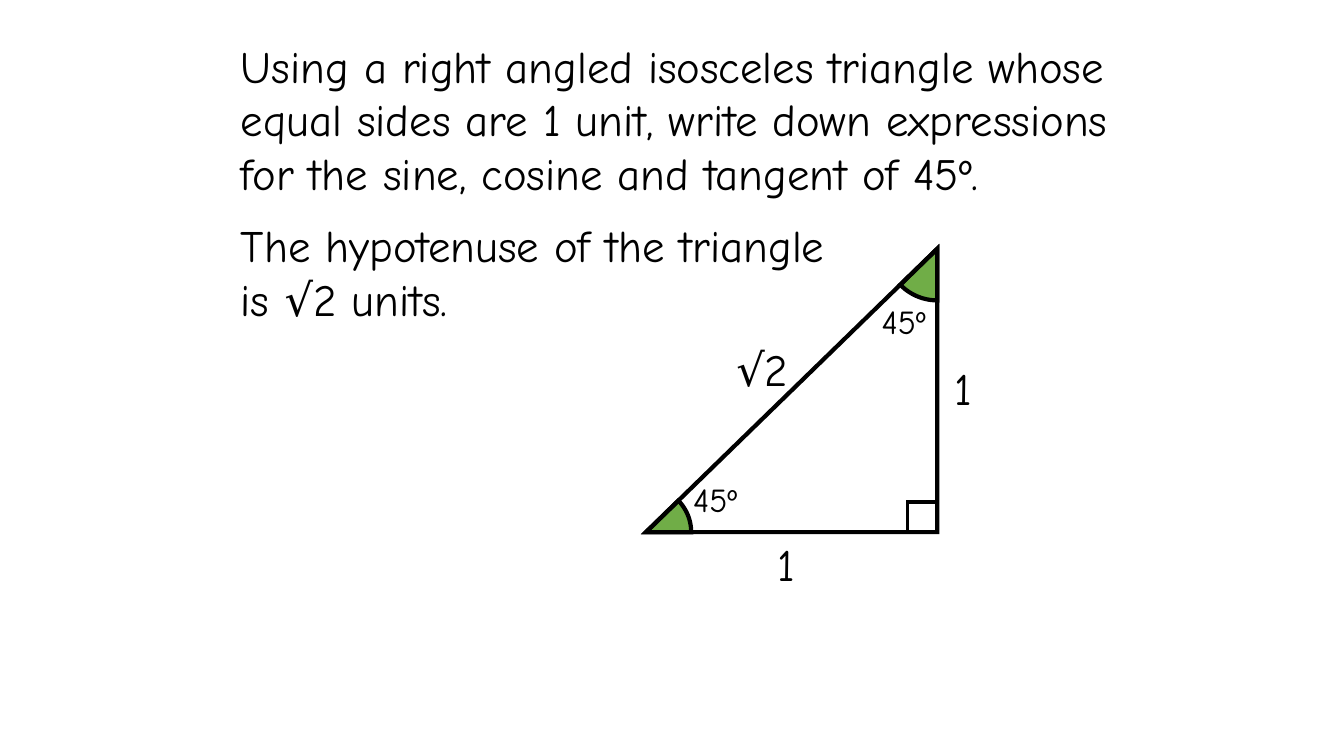
from dataclasses import dataclass
from math import atan2, cos, degrees, radians, sin

from lxml import etree
from pptx import Presentation
from pptx.dml.color import RGBColor
from pptx.enum.shapes import MSO_SHAPE
from pptx.oxml.ns import qn
from pptx.util import Cm, Pt

RIGHT_TRIANGLE = MSO_SHAPE.RIGHT_TRIANGLE
RECTANGLE = MSO_SHAPE.RECTANGLE


@dataclass(frozen=True)
class Theme:
    font: str = "Comic Neue"
    ink: RGBColor = RGBColor(0x00, 0x00, 0x00)
    angle_fill: RGBColor = RGBColor(0x70, 0xAD, 0x47)
    body_size: float = 32
    angle_size: float = 24
    side_line: float = 3
    square_line: float = 2.25


THEME = Theme()


# All lengths below are in centimetres
@dataclass(frozen=True)
class Label:
    text: str
    left: float
    top: float
    width: float
    height: float
    size: float = THEME.body_size


@dataclass(frozen=True)
class Sector:
    x: float
    y: float
    radius: float
    start: float  # degrees, clockwise from the right
    end: float


@dataclass(frozen=True)
class Outline:
    kind: int
    left: float
    top: float
    width: float
    height: float
    line: float


# Triangle geometry
LEFT, TOP, BASE, HEIGHT = 16.28, 6.27, 7.34, 7.14
RIGHT, BOTTOM = LEFT + BASE, TOP + HEIGHT
SLOPE = degrees(atan2(HEIGHT, BASE))
SQUARE = 0.76
ARC_STEPS = 24

SENTENCES = [
    Label("The hypotenuse of the triangle \vis √2 units.", 5.82, 5.36, 23.39, 3.0),
    Label("Using a right angled isosceles triangle whose equal sides are 1 unit, "
          "write down expressions for the sine, cosine and tangent of 45º.",
          5.82, 0.84, 23.39, 4.37),
]
SECTORS = [
    Sector(LEFT, BOTTOM, 1.14, -SLOPE, 0),
    Sector(RIGHT, TOP, 1.3, 90, 180 - SLOPE),
]
OUTLINES = [
    Outline(RIGHT_TRIANGLE, LEFT, TOP, BASE, HEIGHT, THEME.side_line),
    Outline(RECTANGLE, RIGHT - SQUARE, BOTTOM - SQUARE, SQUARE, SQUARE,
            THEME.square_line),
]
MEASURES = [
    Label("45º", 17.22, 11.94, 2.69, 1.27, THEME.angle_size),
    Label("45º", 21.97, 7.47, 3.2, 1.27, THEME.angle_size),
    Label("1", 23.8, 8.97, 1.35, 1.63),
    Label("1", 19.35, 13.41, 3.02, 1.63),
    Label("√2", 18.31, 8.48, 3.2, 1.63),
]


def draw_label(slide, label: Label) -> None:
    box = slide.shapes.add_textbox(
        Cm(label.left), Cm(label.top), Cm(label.width), Cm(label.height))
    frame = box.text_frame
    frame.word_wrap = True
    frame.text = label.text
    for run in frame.paragraphs[0].runs:
        run.font.name = THEME.font
        run.font.size = Pt(label.size)
        run.font.color.rgb = THEME.ink


def set_line(shape, width: float) -> None:
    """Give a shape a black outline with pointed corners and no shadow."""
    shape.shadow.inherit = False
    shape.line.color.rgb = THEME.ink
    shape.line.width = Pt(width)
    line = shape.element.spPr.find(qn("a:ln"))
    etree.SubElement(line, qn("a:miter"), lim="800000")


def draw_sector(slide, sector: Sector) -> None:
    step = (sector.end - sector.start) / ARC_STEPS
    angles = [radians(sector.start + i * step) for i in range(ARC_STEPS + 1)]
    arc = [(Cm(sector.x + sector.radius * cos(a)),
            Cm(sector.y + sector.radius * sin(a))) for a in angles]
    builder = slide.shapes.build_freeform(Cm(sector.x), Cm(sector.y))
    builder.add_line_segments(arc, close=True)
    wedge = builder.convert_to_shape()
    wedge.fill.solid()
    wedge.fill.fore_color.rgb = THEME.angle_fill
    set_line(wedge, THEME.side_line)


def draw_outline(slide, outline: Outline) -> None:
    shape = slide.shapes.add_shape(
        outline.kind, Cm(outline.left), Cm(outline.top),
        Cm(outline.width), Cm(outline.height))
    shape.fill.background()
    set_line(shape, outline.line)
    if outline.kind == RIGHT_TRIANGLE:
        # Mirror it so the right angle is at the lower right
        shape.element.spPr.find(qn("a:xfrm")).set("flipH", "1")


def main() -> None:
    deck = Presentation()
    deck.slide_width, deck.slide_height = Cm(33.87), Cm(19.05)
    slide = deck.slides.add_slide(deck.slide_layouts[6])

    # Question and first step
    for sentence in SENTENCES:
        draw_label(slide, sentence)

    # Triangle with its marked angles
    for sector in SECTORS:
        draw_sector(slide, sector)
    for outline in OUTLINES:
        draw_outline(slide, outline)

    # Angles and side lengths
    for measure in MEASURES:
        draw_label(slide, measure)

    deck.save("out.pptx")


if __name__ == "__main__":
    main()
